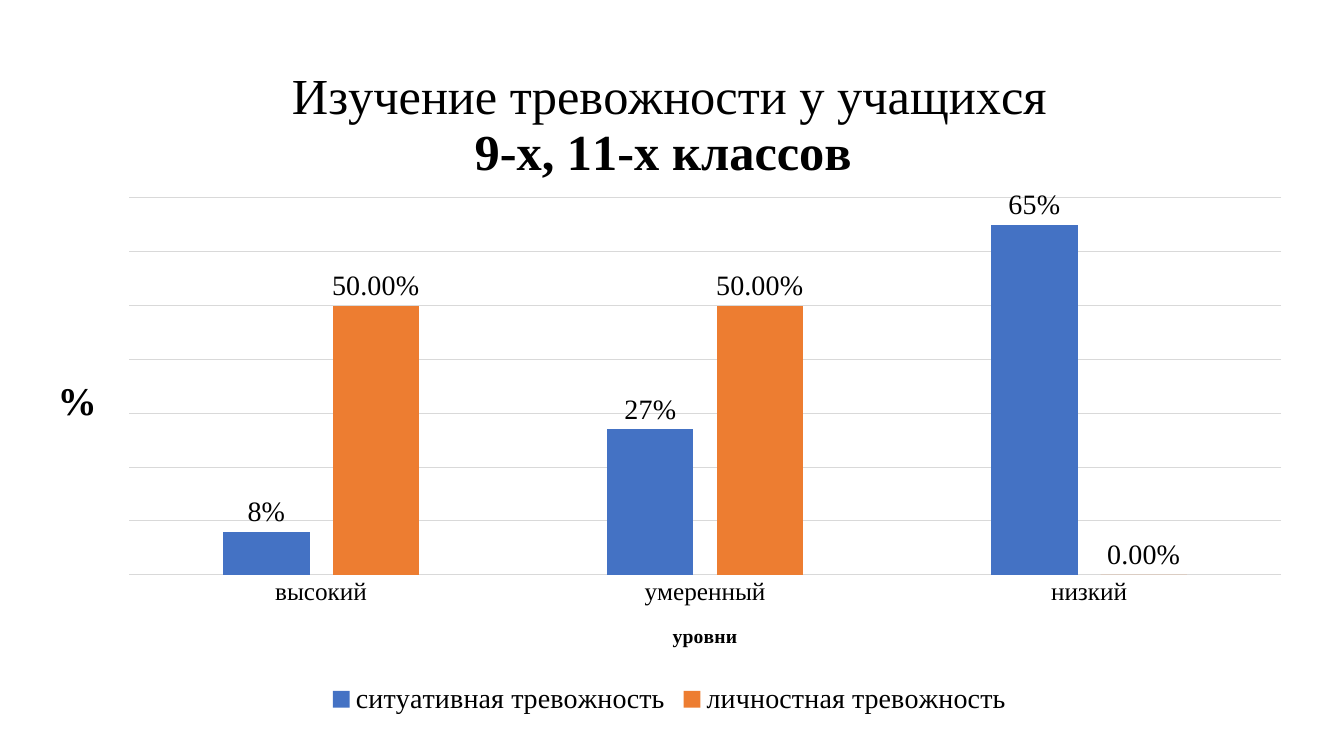
"""Builds a slide with a column chart of pupils' anxiety levels."""
from lxml import etree
from pptx import Presentation
from pptx.chart.data import CategoryChartData
from pptx.dml.color import RGBColor
from pptx.enum.chart import XL_CHART_TYPE, XL_LABEL_POSITION, XL_LEGEND_POSITION, XL_TICK_MARK
from pptx.oxml.ns import qn
from pptx.util import Inches, Pt

COLUMNS = XL_CHART_TYPE.COLUMN_CLUSTERED
OUTSIDE_END = XL_LABEL_POSITION.OUTSIDE_END
BOTTOM = XL_LEGEND_POSITION.BOTTOM
NO_TICK = XL_TICK_MARK.NONE

TITLE_LINES = [("Изучение тревожности у учащихся", False), ("9-х, 11-х классов ", True)]
LEVELS_TITLE = "уровни"
PERCENT_TITLE = "%"
LEVELS = ["высокий", "умеренный", "низкий"]
SERIES = [
    ("ситуативная тревожность", (0.08, 0.27, 0.65), "0%", "4472C4"),
    ("личностная тревожность", (0.5, 0.5, 0), "0.00%", "ED7D31"),
]
CHART_BOX = (0.32, 0.45, 12.64, 6.7)
PLOT_LAYOUT = {"x": 0.076, "y": 0.226, "w": 0.904, "h": 0.558}

THEME = {
    "font": "Times New Roman", "text": "000000", "line": "D9D9D9",
    "title": 36, "percent": 28, "label": 20, "level": 18, "levels_title": 14,
}


def style_font(font, size, bold=False):
    font.name = THEME["font"]
    font.size = Pt(THEME[size])
    font.bold = bold
    font.color.rgb = RGBColor.from_string(THEME["text"])


def style_line(line):
    line.color.rgb = RGBColor.from_string(THEME["line"])
    line.width = Pt(0.75)


def write_title(frame, lines, size):
    for index, (text, bold) in enumerate(lines):
        para = frame.add_paragraph() if index else frame.paragraphs[0]
        style_font(para.font, size, bold)
        span = para.add_run()
        span.text = text
        style_font(span.font, size, bold)


def fix_plot_area(chart):
    plot_area = chart.plots[0]._element.getparent()
    for old in plot_area.findall(qn("c:layout")):
        plot_area.remove(old)
    layout = etree.Element(qn("c:layout"))
    plot_area.insert(0, layout)
    manual = etree.SubElement(layout, qn("c:manualLayout"))
    settings = {"layoutTarget": "inner", "xMode": "edge", "yMode": "edge", **PLOT_LAYOUT}
    for name, value in settings.items():
        etree.SubElement(manual, qn(f"c:{name}")).set("val", str(value))


def add_anxiety_chart(page):
    data = CategoryChartData()
    data.categories = LEVELS
    for name, values, number_format, _ in SERIES:
        data.add_series(name, values, number_format)
    chart = page.shapes.add_chart(COLUMNS, *map(Inches, CHART_BOX), data).chart
    style_font(chart.font, "label")
    chart.has_title = True
    write_title(chart.chart_title.text_frame, TITLE_LINES, "title")
    chart.chart_title.include_in_layout = False

    chart.has_legend = True
    chart.legend.position = BOTTOM
    chart.legend.include_in_layout = False
    style_font(chart.legend.font, "label")

    level_axis = chart.category_axis
    level_axis.major_tick_mark = NO_TICK
    style_font(level_axis.tick_labels.font, "level")
    style_line(level_axis.format.line)
    write_title(level_axis.axis_title.text_frame, [(LEVELS_TITLE, True)], "levels_title")

    percent_axis = chart.value_axis
    percent_axis.minimum_scale, percent_axis.maximum_scale = 0, 0.7
    percent_axis.major_unit = 0.1
    percent_axis.has_major_gridlines = True
    style_line(percent_axis.major_gridlines.format.line)
    percent_frame = percent_axis.axis_title.text_frame
    write_title(percent_frame, [(PERCENT_TITLE, True)], "percent")
    body = percent_frame._txBody.find(qn("a:bodyPr"))
    body.set("rot", "0")
    body.set("vert", "horz")
    percent_axis.visible = False

    plot = chart.plots[0]
    plot.gap_width, plot.overlap = 219, -27
    plot.vary_by_categories = False
    for series, (_, _, number_format, color) in zip(plot.series, SERIES):
        series.format.fill.solid()
        series.format.fill.fore_color.rgb = RGBColor.from_string(color)
        labels = series.data_labels
        labels.show_value = True
        labels.position = OUTSIDE_END
        labels.number_format = number_format
        labels.number_format_is_linked = False
        style_font(labels.font, "label")
    fix_plot_area(chart)


def main():
    deck = Presentation()
    deck.slide_width, deck.slide_height = Inches(13.33), Inches(7.5)
    page = deck.slides.add_slide(deck.slide_layouts[6])
    add_anxiety_chart(page)
    deck.save("out.pptx")


if __name__ == "__main__":
    main()
